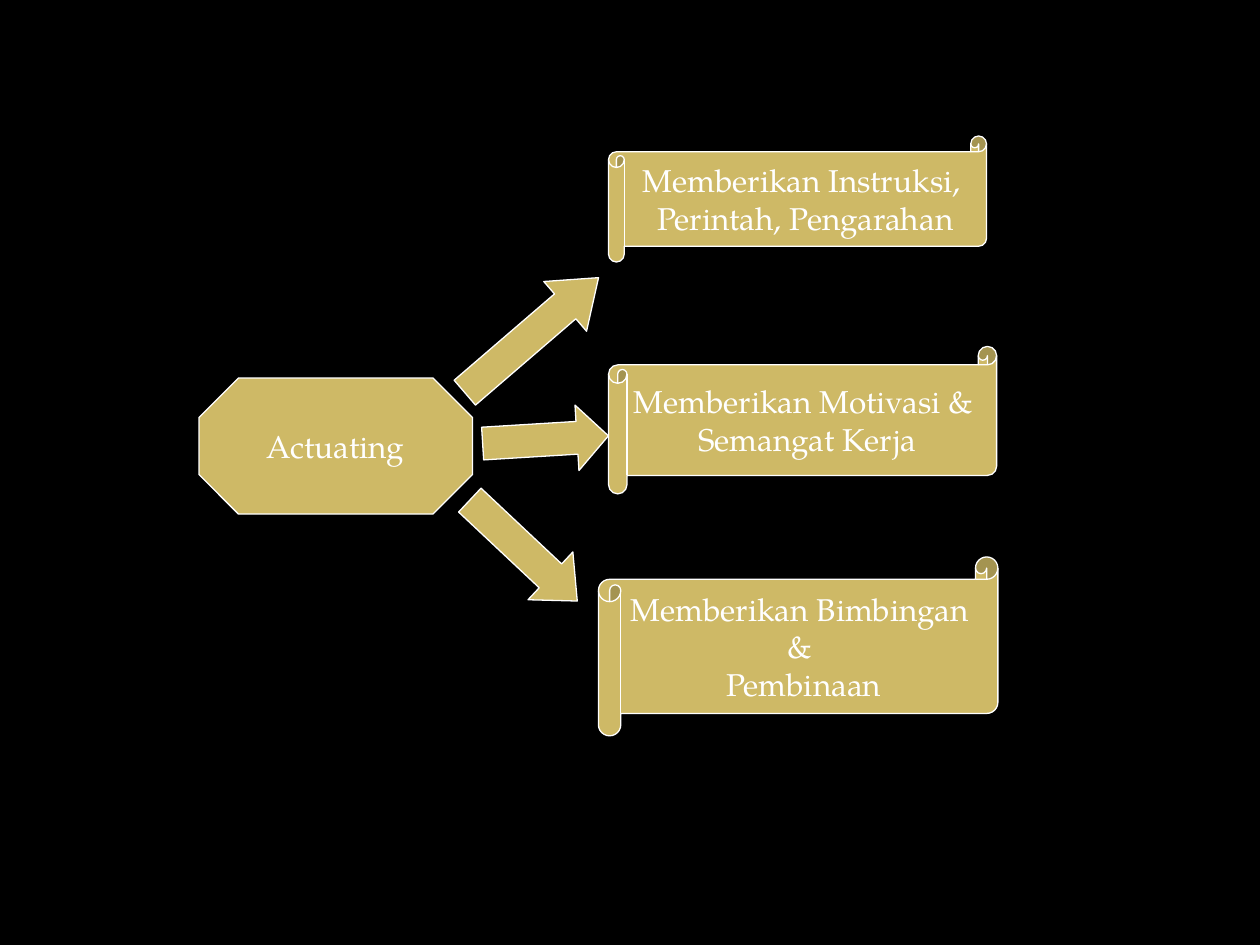
from pptx import Presentation
from pptx.dml.color import RGBColor
from pptx.enum import shapes, text
from pptx.util import Inches, Pt

BLACK = RGBColor(0x00, 0x00, 0x00)
GOLD = RGBColor(0xCE, 0xB9, 0x66)
WHITE = RGBColor(0xFF, 0xFF, 0xFF)
FONT = "TeX Gyre Pagella"
KIND = shapes.MSO_SHAPE

TASKS = [
    ((4.83, 1.08, 3, 1), ["Memberikan Instruksi,", " Perintah, Pengarahan"]),
    ((4.83, 2.75, 3.08, 1.17), ["Memberikan Motivasi & ", "Semangat Kerja"]),
    ((4.75, 4.42, 3.17, 1.42), ["Memberikan Bimbingan ", "& ", "Pembinaan"]),
]
ARROWS = [
    ((3.52, 2.4, 1.4, 0.52), 319.3),
    ((3.83, 3.23, 1, 0.52), 356.5),
    ((3.57, 4.11, 1.17, 0.52), 43.2),
]


def write(shape, lines, size=18, color=WHITE, align=text.PP_ALIGN.CENTER):
    """Write one paragraph per line into the shape."""
    frame = shape.text_frame
    frame.word_wrap = False
    frame.vertical_anchor = text.MSO_ANCHOR.MIDDLE
    for i, line in enumerate(lines):
        para = frame.add_paragraph() if i else frame.paragraphs[0]
        para.alignment = align
        run = para.add_run()
        run.text = line
        run.font.name = FONT
        run.font.size = Pt(size)
        run.font.color.rgb = color


def draw(slide, kind, box, *adjust):
    """Add a gold shape with a thin white outline."""
    shape = slide.shapes.add_shape(kind, *map(Inches, box))
    shape.shadow.inherit = False
    shape.fill.solid()
    shape.fill.fore_color.rgb = GOLD
    shape.line.color.rgb = WHITE
    shape.line.width = Pt(0.75)
    for i, value in enumerate(adjust):
        shape.adjustments[i] = value
    return shape


def topic(slide, box, lines):
    """Place the octagon that names the topic."""
    write(draw(slide, KIND.OCTAGON, box, 0.29), lines)


def scroll(slide, box, lines):
    """Place a scroll that describes one task."""
    write(draw(slide, KIND.HORIZONTAL_SCROLL, box, 0.125), lines)


def arrow(slide, box, angle):
    """Place a turned arrow whose head grows with its length."""
    shape = draw(slide, KIND.RIGHT_ARROW, box, 0.5, 0.48 * box[2])
    shape.rotation = angle


def main():
    """Build and save the slide."""
    deck = Presentation()
    deck.slide_width, deck.slide_height = Inches(10), Inches(7.5)
    slide = deck.slides.add_slide(deck.slide_layouts[6])
    slide.background.fill.solid()
    slide.background.fill.fore_color.rgb = BLACK
    topic(slide, (1.58, 3, 2.17, 1.08), ["Actuating"])
    for box, lines in TASKS:
        scroll(slide, box, lines)
    for box, angle in ARROWS:
        arrow(slide, box, angle)
    deck.save("out.pptx")


if __name__ == "__main__":
    main()
